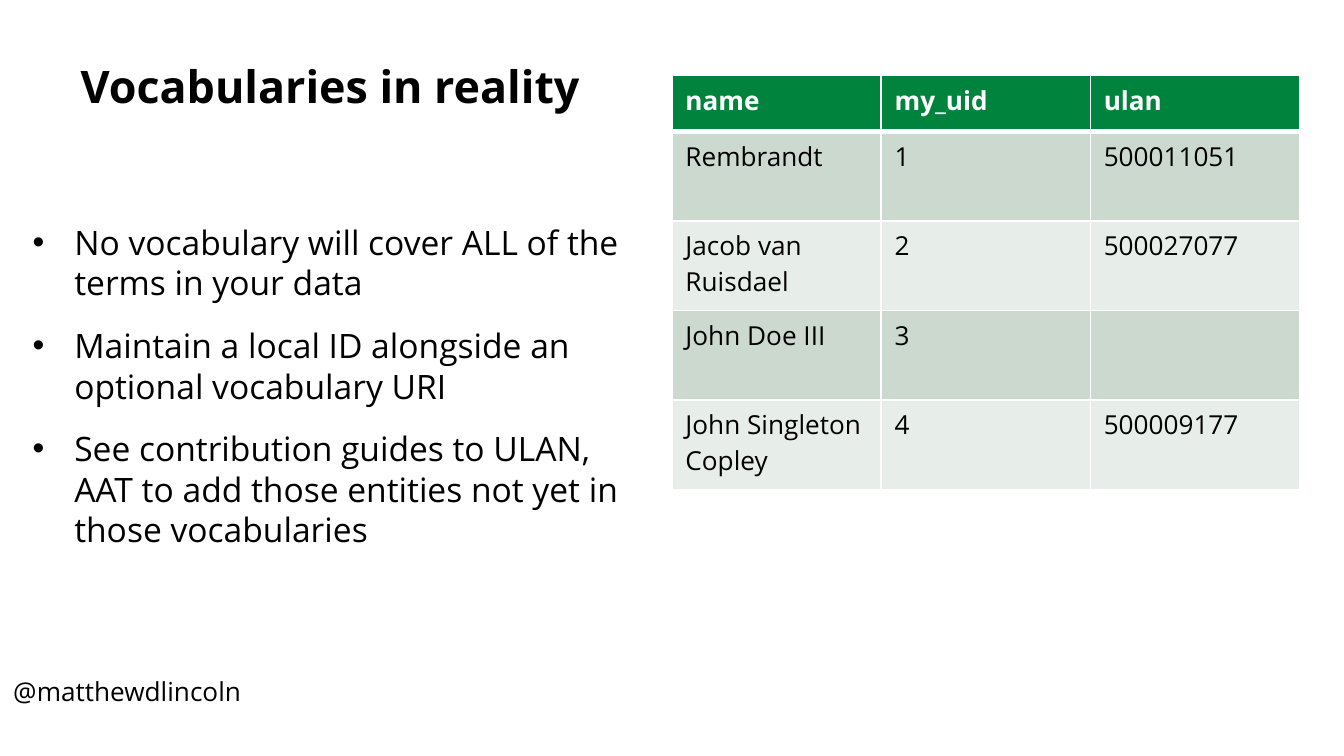
from dataclasses import dataclass

from lxml.etree import SubElement
from pptx import Presentation
from pptx.dml.color import RGBColor
from pptx.enum.text import MSO_ANCHOR, PP_ALIGN
from pptx.oxml.ns import qn
from pptx.util import Inches, Length, Pt

SLIDE_WIDTH = Inches(10)
SLIDE_HEIGHT = Length(SLIDE_WIDTH * 9 // 16)


@dataclass(frozen=True)
class Theme:
    font: str = "Open Sans"
    ink: str = "000000"
    paper: str = "FFFFFF"
    header: str = "00833C"
    bands: tuple[str, str] = ("CCD9CE", "E7EDE8")
    title_size: int = 24
    body_size: int = 18
    small_size: int = 14
    rule: int = 1
    header_rule: int = 3


@dataclass(frozen=True)
class Frame:
    """Position and size in percent of the slide."""
    left: float
    top: float
    width: float
    height: float

    def bounds(self) -> tuple[Length, Length, Length, Length]:
        return (across(self.left), down(self.top), across(self.width), down(self.height))


THEME = Theme()
TITLE_FRAME = Frame(5, 7.1, 90, 11.9)
BODY_FRAME = Frame(1.45, 28.5, 46.7, 45.5)
TABLE_FRAME = Frame(50, 10, 46.7, 54.8)
HANDLE_FRAME = Frame(0, 88.5, 19.2, 2.7)
HEADER_ROW_HEIGHT = 7.4

BULLETS = (
    "No vocabulary will cover ALL of the terms in your data",
    "Maintain a local ID alongside an optional vocabulary URI",
    "See contribution guides to ULAN, AAT to add those entities not yet in those vocabularies",
)
ARTISTS = (
    ("name", "my_uid", "ulan"),
    ("Rembrandt", "1", "500011051"),
    ("Jacob van Ruisdael", "2", "500027077"),
    ("John Doe III", "3", ""),
    ("John Singleton Copley", "4", "500009177"),
)


def across(percent: float) -> Length:
    return Length(round(SLIDE_WIDTH * percent / 100))


def down(percent: float) -> Length:
    return Length(round(SLIDE_HEIGHT * percent / 100))


def style(para, size: int, color: str = THEME.ink, bold: bool = False) -> None:
    para.alignment = PP_ALIGN.LEFT
    para.font.name = THEME.font
    para.font.size = Pt(size)
    para.font.bold = bold
    para.font.color.rgb = RGBColor.from_string(color)


def place_title(slide, text: str) -> None:
    title = slide.shapes.title
    title.left, title.top, title.width, title.height = TITLE_FRAME.bounds()
    frame = title.text_frame
    frame.text = text
    frame.vertical_anchor = MSO_ANCHOR.TOP
    frame.margin_top = Inches(0.04)
    style(frame.paragraphs[0], THEME.title_size, bold=True)


def add_bullets(slide, items: tuple[str, ...]) -> None:
    frame = slide.shapes.add_textbox(*BODY_FRAME.bounds()).text_frame
    frame.word_wrap = True
    frame.vertical_anchor = MSO_ANCHOR.TOP
    frame.text = "\n".join(items)
    for para in frame.paragraphs:
        para.space_after = Pt(12)
        properties = para._p.get_or_add_pPr()
        properties.set("marL", str(Inches(0.31)))
        properties.set("indent", str(-Inches(0.31)))
        SubElement(properties, qn("a:buFont"), typeface="Arial")
        SubElement(properties, qn("a:buChar"), char="•")
        style(para, THEME.body_size)


def add_borders(cell, top: int, bottom: int) -> None:
    properties = cell._tc.get_or_add_tcPr()
    widths = {"a:lnL": THEME.rule, "a:lnR": THEME.rule, "a:lnT": top, "a:lnB": bottom}
    for tag, width in widths.items():
        line = SubElement(properties, qn(tag), w=str(Pt(width)))
        fill = SubElement(line, qn("a:solidFill"))
        SubElement(fill, qn("a:srgbClr"), val=THEME.paper)


def add_artist_table(slide, rows: tuple[tuple[str, ...], ...]) -> None:
    shape = slide.shapes.add_table(len(rows), len(rows[0]), *TABLE_FRAME.bounds())
    table = shape.table
    body_row_height = (TABLE_FRAME.height - HEADER_ROW_HEIGHT) / (len(rows) - 1)
    for row_index, values in enumerate(rows):
        is_header = row_index == 0
        table.rows[row_index].height = down(HEADER_ROW_HEIGHT if is_header else body_row_height)
        background = THEME.header if is_header else THEME.bands[(row_index - 1) % 2]
        color = THEME.paper if is_header else THEME.ink
        top = THEME.header_rule if row_index == 1 else THEME.rule
        bottom = THEME.header_rule if is_header else THEME.rule
        for column_index, value in enumerate(values):
            cell = table.cell(row_index, column_index)
            cell.text = value
            style(cell.text_frame.paragraphs[0], THEME.small_size, color, is_header)
            add_borders(cell, top, bottom)
            cell.fill.solid()
            cell.fill.fore_color.rgb = RGBColor.from_string(background)


def add_handle(slide, text: str) -> None:
    frame = slide.shapes.add_textbox(*HANDLE_FRAME.bounds()).text_frame
    frame.word_wrap = True
    frame.text = text
    style(frame.paragraphs[0], THEME.small_size)


def main() -> None:
    deck = Presentation()
    deck.slide_width, deck.slide_height = SLIDE_WIDTH, SLIDE_HEIGHT
    page = deck.slides.add_slide(deck.slide_layouts.get_by_name("Title Only"))
    place_title(page, "Vocabularies in reality")
    add_bullets(page, BULLETS)
    add_artist_table(page, ARTISTS)
    add_handle(page, "@matthewdlincoln")
    deck.save("out.pptx")


if __name__ == "__main__":
    main()
